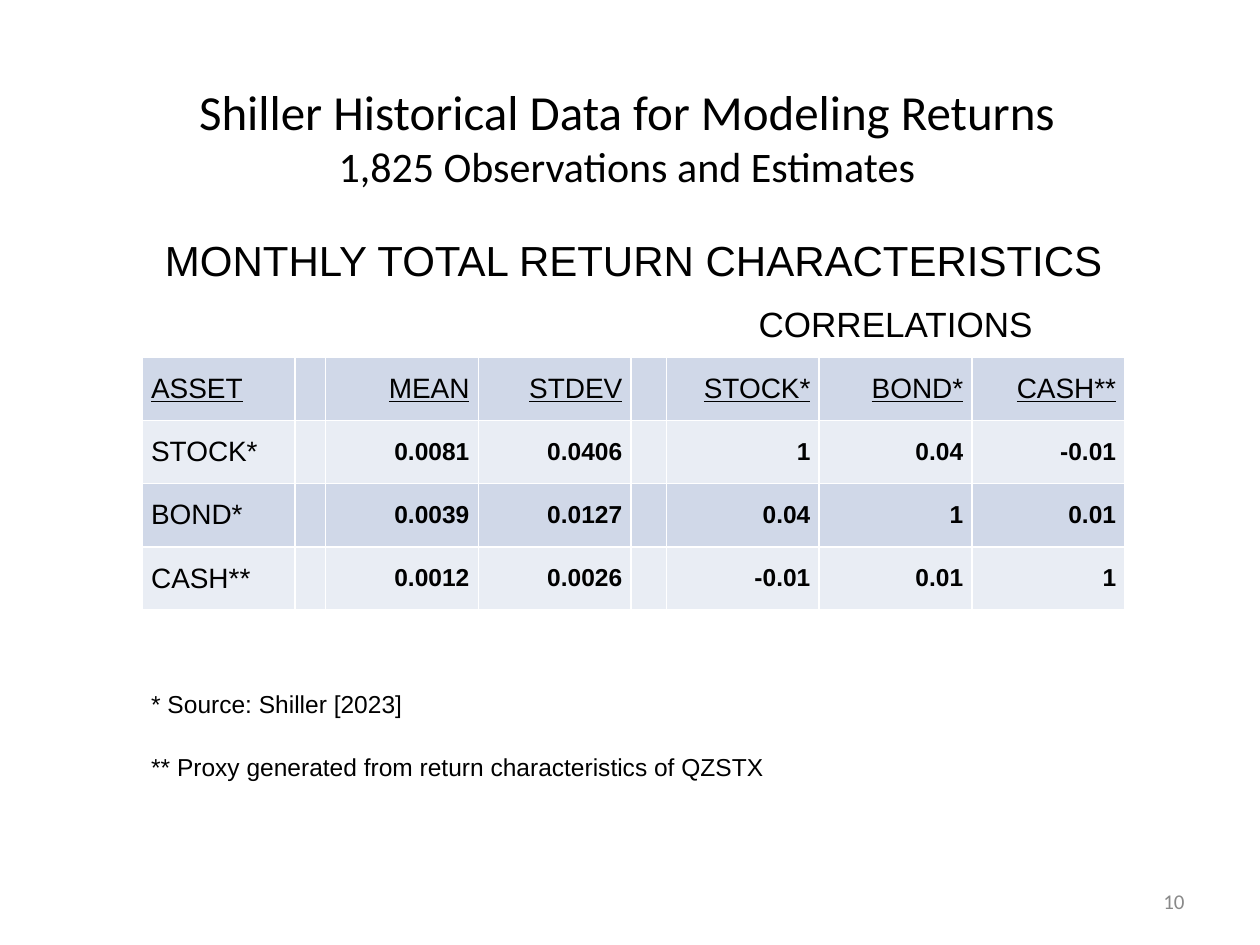
from dataclasses import dataclass

from pptx import Presentation
from pptx.dml.color import RGBColor
from pptx.enum.text import MSO_ANCHOR, PP_ALIGN
from pptx.table import Table
from pptx.util import Inches, Pt

LEFT, CENTER, RIGHT = PP_ALIGN.LEFT, PP_ALIGN.CENTER, PP_ALIGN.RIGHT
MIDDLE = MSO_ANCHOR.MIDDLE
BLACK = RGBColor(0x00, 0x00, 0x00)
GRAY = RGBColor(0x89, 0x89, 0x89)
BANDS = (RGBColor(0xD0, 0xD8, 0xE8), RGBColor(0xE9, 0xED, 0xF4))

TABLE_WIDTH, TABLE_HEIGHT, ROW_COUNT = 8.42, 5.52, 11
MARGIN_LEFT, MARGIN_RIGHT, GAP_ONE, GAP_TWO = 0.3, 0.32, 0.24, 0.28
VALUE_WIDTH = (TABLE_WIDTH - MARGIN_LEFT - MARGIN_RIGHT - GAP_ONE - GAP_TWO) / 6
COLUMN_WIDTHS = (MARGIN_LEFT, VALUE_WIDTH, GAP_ONE, VALUE_WIDTH, VALUE_WIDTH,
                 GAP_TWO, VALUE_WIDTH, VALUE_WIDTH, VALUE_WIDTH, MARGIN_RIGHT)

FIRST_DATA_ROW = 3
FILLED_COLUMNS = range(1, 9)
DATA_COLUMNS = (1, 3, 4, 6, 7, 8)
DATA = (
    ("ASSET", "MEAN", "STDEV", "STOCK*", "BOND*", "CASH**"),
    ("STOCK*", "0.0081", "0.0406", "1", "0.04", "-0.01"),
    ("BOND*", "0.0039", "0.0127", "0.04", "1", "0.01"),
    ("CASH**", "0.0012", "0.0026", "-0.01", "0.01", "1"),
)


@dataclass
class Entry:
    row: int
    column: int
    text: str
    size: int
    align: PP_ALIGN = LEFT
    columns: int = 1
    bold: bool = False
    underline: bool = False


CAPTIONS = (
    Entry(1, 1, "MONTHLY TOTAL RETURN CHARACTERISTICS", 24, CENTER, 8),
    Entry(2, 6, "CORRELATIONS", 20, CENTER, 3),
    Entry(8, 1, "* Source: Shiller [2023]", 14, LEFT, 3),
    Entry(9, 1, "** Proxy generated from return characteristics of QZSTX", 14, LEFT, 8),
)


def format_font(font, **values) -> None:
    color = values.pop("color")
    for name, value in values.items():
        setattr(font, name, value)
    font.color.rgb = color


def place(shape, left: float, top: float, width: float, height: float) -> None:
    for name, value in dict(left=left, top=top, width=width, height=height).items():
        setattr(shape, name, Inches(value))


def write_entry(table: Table, entry: Entry) -> None:
    cell = table.cell(entry.row, entry.column)
    if entry.columns > 1:
        cell.merge(table.cell(entry.row, entry.column + entry.columns - 1))
    cell.vertical_anchor = MIDDLE
    cell.margin_left = cell.margin_right = Inches(0.07)
    cell.margin_top = cell.margin_bottom = 0
    para = cell.text_frame.paragraphs[0]
    para.alignment = entry.align
    para.space_after = Pt(11.2)
    span = para.add_run()
    span.text = entry.text
    format_font(span.font, name="Arial", size=Pt(entry.size), bold=entry.bold,
                underline=entry.underline, color=BLACK)


def data_entries() -> list[Entry]:
    entries = []
    for index, values in enumerate(DATA):
        for column, text in zip(DATA_COLUMNS, values):
            is_header, is_label = index == 0, column == 1
            is_number = not (is_header or is_label)
            entries.append(Entry(
                FIRST_DATA_ROW + index, column, text, 14 if is_number else 16,
                LEFT if is_label else RIGHT, bold=is_number, underline=is_header))
    return entries


def add_returns_table(page) -> None:
    frame = page.shapes.add_table(
        ROW_COUNT, len(COLUMN_WIDTHS), Inches(0.83), Inches(1.33),
        Inches(TABLE_WIDTH), Inches(TABLE_HEIGHT))
    table = frame.table
    for column, width in zip(table.columns, COLUMN_WIDTHS):
        column.width = Inches(width)
    for row_index, row in enumerate(table.rows):
        band = row_index - FIRST_DATA_ROW
        for column_index, cell in enumerate(row.cells):
            if 0 <= band < len(DATA) and column_index in FILLED_COLUMNS:
                cell.fill.solid()
                cell.fill.fore_color.rgb = BANDS[band % 2]
            else:
                cell.fill.background()
    for entry in (*CAPTIONS, *data_entries()):
        write_entry(table, entry)


def add_title(page) -> None:
    """Write the title and bring it in front of the table's white borders."""
    title = page.shapes.title
    place(title, 0.45, 0.58, 9.05, 1)
    title.text_frame.vertical_anchor = MIDDLE
    para = title.text_frame.paragraphs[0]
    para.alignment = CENTER
    lines = (("Shiller Historical Data for Modeling Returns", 28),
             ("1,825 Observations and Estimates", 24))
    for index, (text, size) in enumerate(lines):
        if index:
            para.add_line_break()
        span = para.add_run()
        span.text = text
        format_font(span.font, name="Calibri", size=Pt(size), color=BLACK)
    title.element.getparent().append(title.element)


def add_page_number(page) -> None:
    box = page.shapes.add_textbox(0, 0, 0, 0)
    place(box, 7.17, 6.95, 2.33, 0.4)
    box.text_frame.word_wrap = True
    box.text_frame.vertical_anchor = MIDDLE
    para = box.text_frame.paragraphs[0]
    para.alignment = RIGHT
    span = para.add_run()
    span.text = "10"
    format_font(span.font, name="Calibri", size=Pt(12), color=GRAY)


def main() -> None:
    deck = Presentation()
    deck.slide_width, deck.slide_height = Inches(10), Inches(7.5)
    page = deck.slides.add_slide(deck.slide_layouts[5])
    add_returns_table(page)
    add_page_number(page)
    add_title(page)
    deck.save("out.pptx")


if __name__ == "__main__":
    main()
